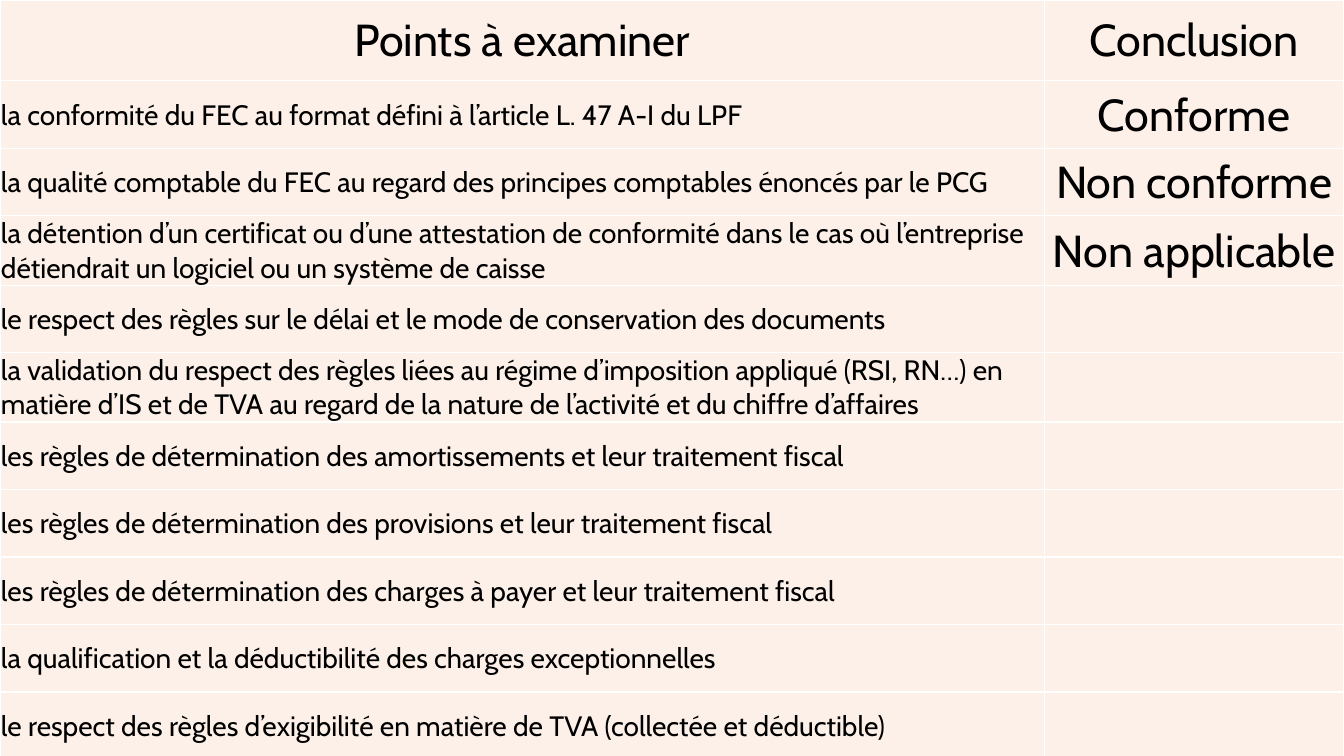
from dataclasses import dataclass

import lxml.etree
import pptx
import pptx.dml.color
import pptx.enum.text
import pptx.oxml.ns
import pptx.table
import pptx.util

COLOURS = {"background": "9BAFB5", "cell": "FDF0E8", "border": "FFFFFF", "text": "000000"}
FONT = "Cabin"
SLIDE_WIDTH = pptx.util.Inches(13.33)
SLIDE_HEIGHT = pptx.util.Inches(7.5)
POINT_SHARE = 0.777
HEADER_SHARE = 0.107
LARGE, SMALL = 32, 20
CENTRE = pptx.enum.text.PP_ALIGN.CENTER
LEFT = pptx.enum.text.PP_ALIGN.LEFT


@dataclass(frozen=True)
class Check:
    point: str
    conclusion: str = ""


HEADER = Check("Points à examiner", "Conclusion")
CHECKS = [
    Check("la conformité du FEC au format défini à l’article L. 47 A-I du LPF", "Conforme"),
    Check("la qualité comptable du FEC au regard des principes comptables énoncés par le PCG",
          "Non conforme"),
    Check("la détention d’un certificat ou d’une attestation de conformité dans le cas où "
          "l’entreprise détiendrait un logiciel ou un système de caisse", "Non applicable"),
    Check("le respect des règles sur le délai et le mode de conservation des documents"),
    Check("la validation du respect des règles liées au régime d’imposition appliqué "
          "(RSI, RN…) en matière d’IS et de TVA au regard de la nature de l’activité "
          "et du chiffre d’affaires"),
    Check("les règles de détermination des amortissements et leur traitement fiscal"),
    Check("les règles de détermination des provisions et leur traitement fiscal"),
    Check("les règles de détermination des charges à payer et leur traitement fiscal"),
    Check("la qualification et la déductibilité des charges exceptionnelles"),
    Check("le respect des règles d’exigibilité en matière de TVA (collectée et déductible)"),
]


def colour(name: str) -> pptx.dml.color.RGBColor:
    return pptx.dml.color.RGBColor.from_string(COLOURS[name])


def draw_borders(cell: pptx.table._Cell) -> None:
    properties = cell._tc.get_or_add_tcPr()
    for side in ("a:lnL", "a:lnR", "a:lnT", "a:lnB"):
        border = lxml.etree.SubElement(
            properties, pptx.oxml.ns.qn(side), w=str(pptx.util.Pt(1)))
        fill = lxml.etree.SubElement(border, pptx.oxml.ns.qn("a:solidFill"))
        lxml.etree.SubElement(fill, pptx.oxml.ns.qn("a:srgbClr"), val=COLOURS["border"])


def write(cell: pptx.table._Cell, text: str, *, size: int,
          align: pptx.enum.text.PP_ALIGN) -> None:
    paragraph = cell.text_frame.paragraphs[0]
    paragraph.alignment = align
    run = paragraph.add_run()
    run.text = text
    run.font.name = FONT
    run.font.size = pptx.util.Pt(size)
    run.font.bold = False
    run.font.color.rgb = colour("text")


def draw_cell(cell: pptx.table._Cell, text: str, *, size: int,
              align: pptx.enum.text.PP_ALIGN) -> None:
    draw_borders(cell)
    cell.fill.solid()
    cell.fill.fore_color.rgb = colour("cell")
    cell.vertical_anchor = pptx.enum.text.MSO_ANCHOR.MIDDLE
    cell.margin_left = cell.margin_right = cell.margin_top = pptx.util.Inches(0.01)
    cell.margin_bottom = 0
    if text:
        write(cell, text, size=size, align=align)


def draw_checklist(slide: pptx.slide.Slide) -> None:
    checklist = slide.shapes.add_table(
        len(CHECKS) + 1, 2, 0, 0, SLIDE_WIDTH, SLIDE_HEIGHT).table
    checklist.first_row = False
    checklist.horz_banding = False
    point_width = int(SLIDE_WIDTH * POINT_SHARE)
    checklist.columns[0].width = point_width
    checklist.columns[1].width = SLIDE_WIDTH - point_width
    header_height = int(SLIDE_HEIGHT * HEADER_SHARE)
    check_height = (SLIDE_HEIGHT - header_height) // len(CHECKS)
    for row, check in enumerate([HEADER, *CHECKS]):
        is_header = check is HEADER
        checklist.rows[row].height = header_height if is_header else check_height
        draw_cell(checklist.cell(row, 0), check.point,
                  size=LARGE if is_header else SMALL,
                  align=CENTRE if is_header else LEFT)
        draw_cell(checklist.cell(row, 1), check.conclusion, size=LARGE, align=CENTRE)


def main() -> None:
    presentation = pptx.Presentation()
    presentation.slide_width = SLIDE_WIDTH
    presentation.slide_height = SLIDE_HEIGHT
    slide = presentation.slides.add_slide(presentation.slide_layouts[6])
    slide.background.fill.solid()
    slide.background.fill.fore_color.rgb = colour("background")
    draw_checklist(slide)
    presentation.save("out.pptx")


if __name__ == "__main__":
    main()
